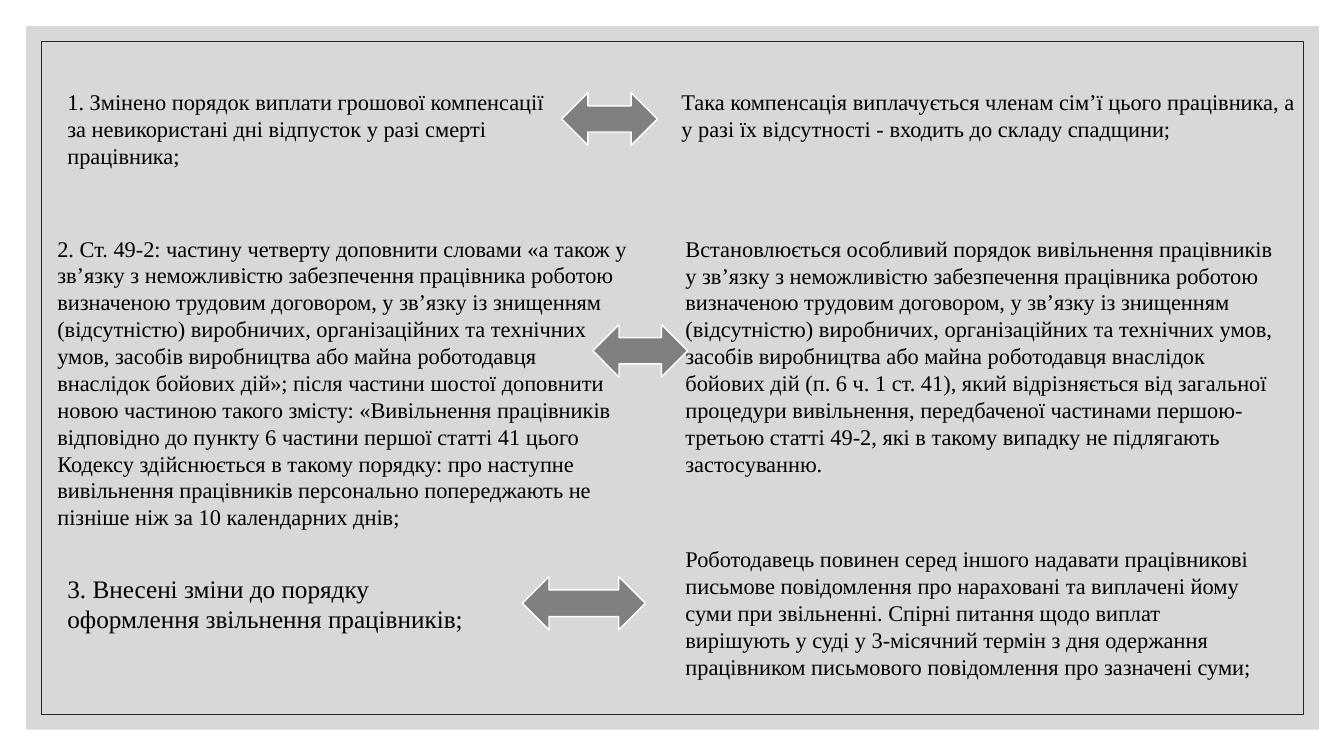
from lxml.etree import SubElement
from pptx import Presentation
from pptx.dml.color import RGBColor
from pptx.enum.shapes import MSO_SHAPE as Shape
from pptx.enum.text import MSO_AUTO_SIZE as AutoSize
from pptx.oxml.ns import qn
from pptx.util import Emu, Pt

PX = 9144  # 100 px to the inch
FONT = "Times New Roman"
COLORS = {"panel": "BFBFBF", "frame": "262626", "text": "000000",
          "arrow": "808080", "arrow_line": "FFFFFF"}

# Each row: change (box, size, text), explanation (box, size, text), arrow box
ROWS = [
    (((57, 83, 495, 125), 16,
      "1. Змінено порядок виплати грошової компенсації за невикористані дні "
      "відпусток у разі смерті працівника;"),
     ((666, 83, 644, 64), 16,
      "Така компенсація виплачується членам сім’ї цього працівника, а у разі "
      "їх відсутності - входить до складу спадщини;"),
     (557, 92, 95, 52)),
    (((47, 228, 585, 337), 16,
      "2. Ст. 49-2: частину четверту доповнити словами «а також у зв’язку з "
      "неможливістю забезпечення працівника роботою визначеною трудовим "
      "договором, у зв’язку із знищенням (відсутністю) виробничих, "
      "організаційних та технічних умов, засобів виробництва або майна "
      "роботодавця внаслідок бойових дій»; після частини шостої доповнити "
      "новою частиною такого змісту: «Вивільнення працівників відповідно до "
      "пункту 6 частини першої статті 41 цього Кодексу здійснюється в такому "
      "порядку: про наступне вивільнення працівників персонально попереджають "
      "не пізніше ніж за 10 календарних днів;"),
     ((670, 228, 607, 252), 16,
      "Встановлюється особливий порядок вивільнення працівників у зв’язку з "
      "неможливістю забезпечення працівника роботою визначеною трудовим "
      "договором, у зв’язку із знищенням (відсутністю) виробничих, "
      "організаційних та технічних умов, засобів виробництва або майна "
      "роботодавця внаслідок бойових дій (п. 6 ч. 1 ст. 41), який "
      "відрізняється від загальної процедури вивільнення, передбаченої "
      "частинами першою-третьою статті 49-2, які в такому випадку не "
      "підлягають застосуванню."),
     (588, 322, 94, 52)),
    (((57, 564, 415, 71), 18,
      "3. Внесені зміни до порядку оформлення звільнення працівників;"),
     ((670, 536, 598, 145), 16,
      "Роботодавець повинен серед іншого надавати працівникові письмове "
      "повідомлення про нараховані та виплачені йому суми при звільненні. "
      "Спірні питання щодо виплат вирішують у суді у 3-місячний термін з дня "
      "одержання працівником письмового повідомлення про зазначені суми;"),
     (518, 572, 122, 53)),
]


def emu(box):
    return [Emu(length * PX) for length in box]


def set_attributes(target, values):
    for name, value in values.items():
        setattr(target, name, value)


def add_figure(slide, kind, box, fill=None, line=None, width=1):
    shape = slide.shapes.add_shape(kind, *emu(box))
    shape.shadow.inherit = False
    for color, paint in ((fill, shape.fill), (line, shape.line.fill)):
        if color:
            paint.solid()
            paint.fore_color.rgb = RGBColor.from_string(COLORS[color])
        else:
            paint.background()
    if line:
        shape.line.width = Pt(width)
    return shape


def add_text(slide, box, size, text):
    frame = slide.shapes.add_textbox(*emu(box)).text_frame
    set_attributes(frame, {"word_wrap": True, "text": text,
                           "auto_size": AutoSize.SHAPE_TO_FIT_TEXT})
    font = frame.paragraphs[0].runs[0].font
    set_attributes(font, {"name": FONT, "size": Pt(size)})
    font.color.rgb = RGBColor.from_string(COLORS["text"])


def add_background(slide, box):
    left, top, width, height = box
    # Translucent panel
    panel = add_figure(slide, Shape.RECTANGLE, box, fill="panel")
    color = panel.fill._xPr.find(qn("a:solidFill"))[0]
    SubElement(color, qn("a:alpha"), val="60000")
    # Thin inner frame
    gap = 15
    inner = (left + gap, top + gap, width - 2 * gap, height - 2 * gap)
    add_figure(slide, Shape.RECTANGLE, inner, line="frame", width=0.5)


def add_row(slide, change, explanation, arrow_box):
    add_text(slide, *change)
    add_text(slide, *explanation)
    add_figure(slide, Shape.LEFT_RIGHT_ARROW, arrow_box, "arrow", "arrow_line")


def main():
    presentation = Presentation()
    set_attributes(presentation, {"slide_width": Emu(1333 * PX),
                                  "slide_height": Emu(750 * PX)})
    slide = presentation.slides.add_slide(presentation.slide_layouts[6])
    add_background(slide, (26, 26, 1282, 698))
    for row in ROWS:
        add_row(slide, *row)
    presentation.save("out.pptx")


if __name__ == "__main__":
    main()
